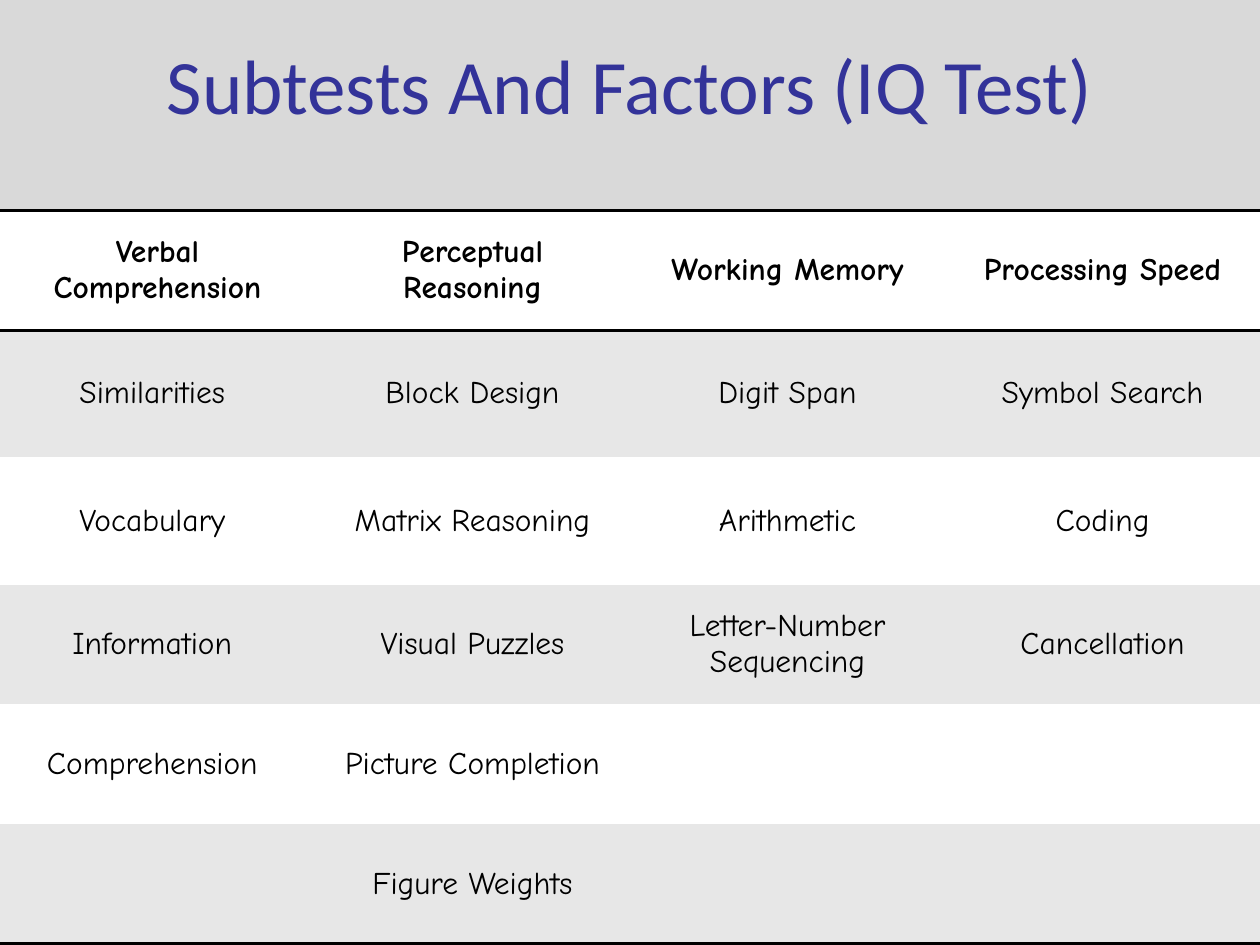
import lxml.etree
import pptx
import pptx.dml.color
import pptx.enum.text
import pptx.oxml.ns
import pptx.util
from pptx.util import Inches

BLACK = "000000"
WHITE = "FFFFFF"
BAND = "E7E7E7"
NO_GRID_STYLE = "{2D5ABB26-0587-4C30-8999-92F81FD0307C}"
ROW_HEIGHTS = [0.95, 1.01, 1.01, 0.95, 0.95, 0.95]
SUBTESTS = [
    ["Verbal Comprehension", "Perceptual Reasoning", "Working Memory", "Processing Speed"],
    ["Similarities ", "Block Design", "Digit Span", "Symbol Search"],
    ["Vocabulary ", "Matrix Reasoning", "Arithmetic", "Coding"],
    ["Information ", "Visual Puzzles", "Letter-Number Sequencing", "Cancellation"],
    ["Comprehension ", "Picture Completion", "", ""],
    ["", "Figure Weights", "", ""],
]


def set_fill(fill, color):
    fill.solid()
    fill.fore_color.rgb = pptx.dml.color.RGBColor.from_string(color)


def style_paragraph(paragraph, font_name, size, color, bold=False):
    paragraph.alignment = pptx.enum.text.PP_ALIGN.CENTER
    paragraph.font.name = font_name
    paragraph.font.size = pptx.util.Pt(size)
    paragraph.font.bold = bold
    set_fill(paragraph.font.fill, color)


def add_border(cell, side, color, width):
    qualify = pptx.oxml.ns.qn
    properties = cell._tc.get_or_add_tcPr()
    line = lxml.etree.SubElement(properties, qualify(f"a:ln{side}"), w=str(pptx.util.Pt(width)))
    solid = lxml.etree.SubElement(line, qualify("a:solidFill"))
    lxml.etree.SubElement(solid, qualify("a:srgbClr"), val=color)


def add_title(slide, text):
    title = slide.shapes.add_textbox(0, 0, Inches(10), Inches(1.33))
    frame = title.text_frame
    frame.word_wrap = True
    frame.vertical_anchor = pptx.enum.text.MSO_ANCHOR.MIDDLE
    frame.text = text
    style_paragraph(frame.paragraphs[0], "Calibri", 44, "333399")


def fill_cell(cell, text, row_index):
    is_header = row_index == 0
    if is_header:
        add_border(cell, "T", BLACK, 2)
    if is_header or row_index == len(SUBTESTS) - 1:
        add_border(cell, "B", BLACK, 2)
    set_fill(cell.fill, BAND if row_index % 2 else WHITE)
    cell.vertical_anchor = pptx.enum.text.MSO_ANCHOR.MIDDLE
    cell.text = text
    style_paragraph(cell.text_frame.paragraphs[0], "Comic Neue", 18, BLACK, is_header)


def add_subtest_table(slide):
    table = slide.shapes.add_table(
        len(SUBTESTS), len(SUBTESTS[0]),
        0, Inches(1.67), Inches(10), Inches(sum(ROW_HEIGHTS)),
    ).table
    table._tbl.tblPr.find(pptx.oxml.ns.qn("a:tableStyleId")).text = NO_GRID_STYLE
    for row_index, (height, texts) in enumerate(zip(ROW_HEIGHTS, SUBTESTS)):
        table.rows[row_index].height = Inches(height)
        for column_index, text in enumerate(texts):
            fill_cell(table.cell(row_index, column_index), text, row_index)


def main():
    presentation = pptx.Presentation()
    presentation.slide_width = Inches(10)
    presentation.slide_height = Inches(7.5)
    slide = presentation.slides.add_slide(presentation.slide_layouts[6])
    set_fill(slide.background.fill, "D9D9D9")
    add_title(slide, "Subtests And Factors (IQ Test)")
    add_subtest_table(slide)
    presentation.save("out.pptx")


if __name__ == "__main__":
    main()
